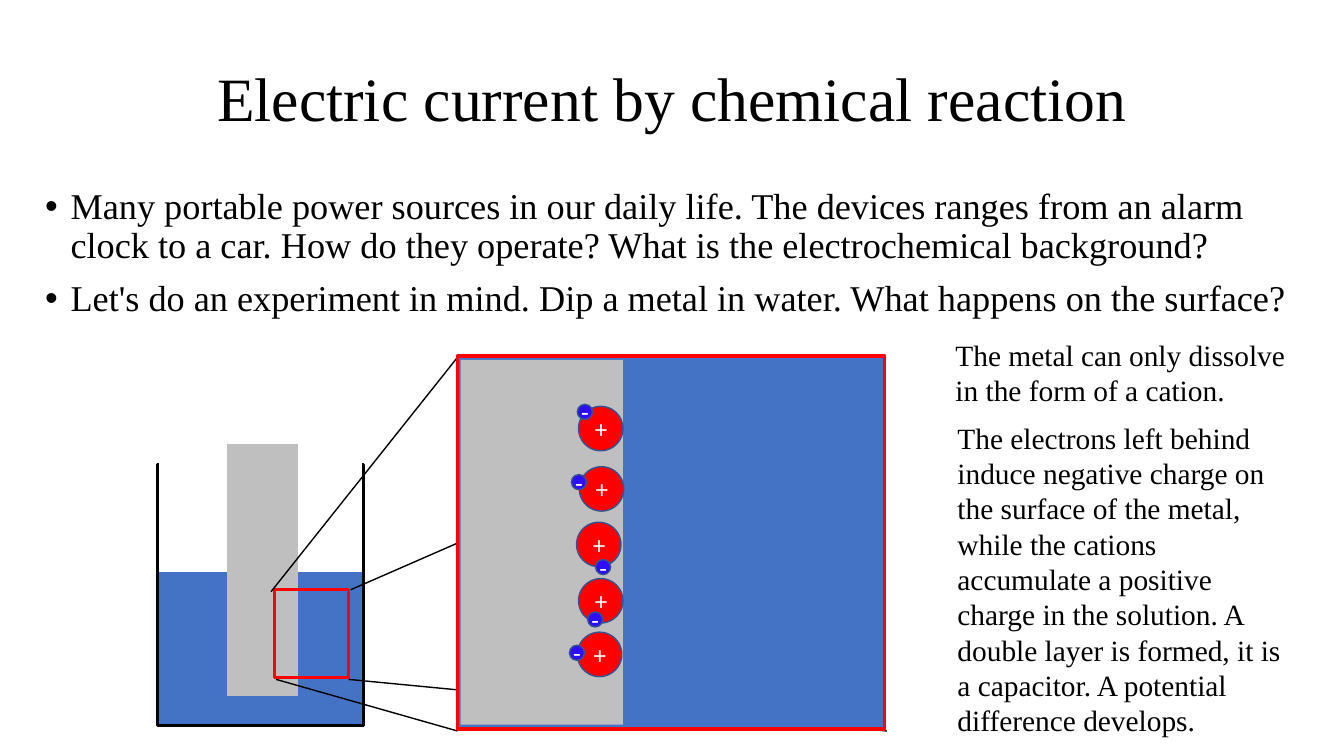
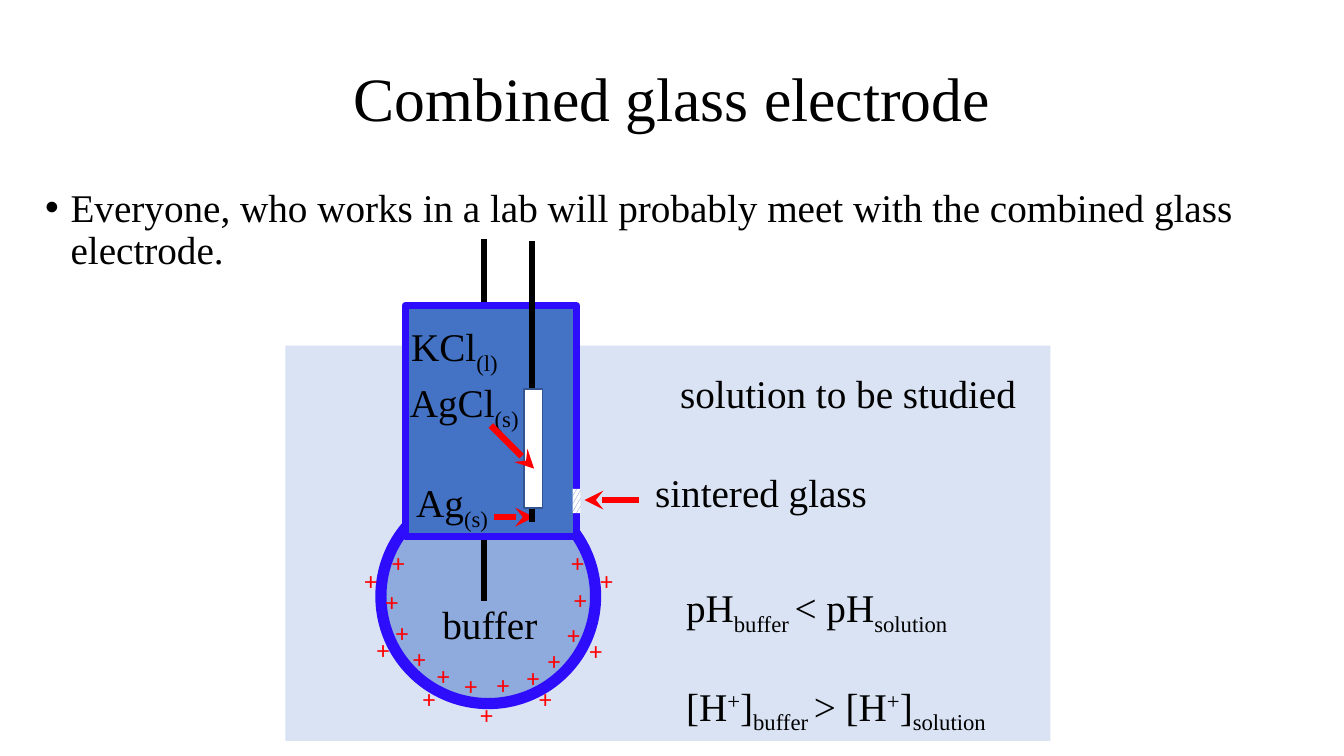
from lxml import etree
from pptx import Presentation
from pptx import util as u
from pptx.dml import color
from pptx.enum import dml, shapes, text
from pptx.oxml import ns

HUE = {"black": "000000", "white": "FFFFFF", "red": "FF0000", "blue": "4472C4",
       "ink": "2E0CFC", "edge": "325491", "metal": "BFBFBF",
       "bath": "DAE3F3", "bulb": "8FAADC"}
RGB = {name: color.RGBColor.from_string(code) for name, code in HUE.items()}
SERIF, SANS = "Times New Roman", "Calibri"
RECT, OVAL = shapes.MSO_SHAPE.RECTANGLE, shapes.MSO_SHAPE.OVAL
MID, TOP = text.MSO_ANCHOR.MIDDLE, text.MSO_ANCHOR.TOP


def draw(page, kind, box, fill=None, edge=None, width=1, rows=(),
         size=28, font=SERIF, ink="black", wrap=True):
    """Add a preset shape, or a text box when kind is None."""
    area = [u.Cm(n) for n in box]
    if kind is None:
        item = page.shapes.add_textbox(*area)
    else:
        item = page.shapes.add_shape(kind, *area)
        item.shadow.inherit = False
        for part, hue in ((item.fill, fill), (item.line.fill, edge)):
            if hue:
                part.solid()
                part.fore_color.rgb = RGB[hue]
            else:
                part.background()
        if edge:
            item.line.width = u.Pt(width)
    if not rows:
        return item
    frame = item.text_frame
    look = {"word_wrap": wrap, "vertical_anchor": MID if kind else TOP}
    if kind is None:
        look["auto_size"] = text.MSO_AUTO_SIZE.SHAPE_TO_FIT_TEXT
    for key, val in look.items():
        setattr(frame, key, val)
    for i, row in enumerate(rows):
        para = frame.add_paragraph() if i else frame.paragraphs[0]
        para.alignment = text.PP_ALIGN.CENTER if kind else text.PP_ALIGN.LEFT
        for words, base in [(row, 0)] if isinstance(row, str) else row:
            run = para.add_run()
            run.text = words
            for key, val in {"name": font, "size": u.Pt(size)}.items():
                setattr(run.font, key, val)
            run.font.color.rgb = RGB[ink]
            if base:
                run.font._element.set("baseline", str(base * 1000))
    return item


def line(page, ends, hue="black", width=1, arrow=False):
    """Add a straight line from one point to another."""
    wire = page.shapes.add_connector(shapes.MSO_CONNECTOR.STRAIGHT,
                                     *[u.Cm(n) for n in ends])
    wire.line.color.rgb = RGB[hue]
    wire.line.width = u.Pt(width)
    if arrow:
        etree.SubElement(wire.line._get_or_add_ln(), ns.qn("a:tailEnd"), type="stealth")
    etree.SubElement(wire._element.spPr, ns.qn("a:effectLst"))


deck = Presentation()
deck.slide_width, deck.slide_height = u.Cm(33.87), u.Cm(19.05)

# Titles and bullets
heads = [
    ("Electric current by chemical reaction", 25.9, 5, [
        "Many portable power sources in our daily life. The devices ranges from an "
        "alarm clock to a car. How do they operate? What is the electrochemical "
        "background?",
        "Let's do an experiment in mind. Dip a metal in water. What happens on the "
        "surface?"]),
    ("Combined glass electrode", 28, 2.54, [
        "Everyone, who works in a lab will probably meet with the combined glass "
        "electrode."]),
]
place = {"left": 2.34, "top": 0.71, "width": 29.21, "height": 3.68}
pages = []
for head, size, tall, points in heads:
    page = deck.slides.add_slide(deck.slide_layouts[5])
    pages.append(page)
    title = page.shapes.title
    for key, val in place.items():
        setattr(title, key, u.Cm(val))
    title.text_frame.text = head
    title.text_frame.vertical_anchor = MID
    para = title.text_frame.paragraphs[0]
    para.alignment, para.line_spacing = text.PP_ALIGN.CENTER, 0.9
    for key, val in {"name": SERIF, "size": u.Pt(44)}.items():
        setattr(para.runs[0].font, key, val)
    para.runs[0].font.color.rgb = RGB["black"]

    body = draw(page, None, (0.89, 4.62, 32.18, tall), rows=points, size=size)
    body.text_frame.auto_size = text.MSO_AUTO_SIZE.NONE
    for para in body.text_frame.paragraphs:
        para.line_spacing, para.space_before = 0.9, u.Pt(10)
        props = para._p.get_or_add_pPr()
        props.set("marL", str(u.Cm(0.64)))
        props.set("indent", str(u.Cm(-0.64)))
        etree.SubElement(props, ns.qn("a:buFont"), typeface="Arial")
        etree.SubElement(props, ns.qn("a:buChar"), char="•")
cell, probe = pages

# Beaker with the metal strip
for box, fill, edge, width in [
    ((3.96, 13.54, 5.21, 4.75), "blue", "black", 2.25),
    ((3.96, 11.71, 5.21, 2.64), "white", "black", 2.25),
    ((4.01, 11.51, 5.11, 2.9), "white", None, 1),
    ((5.74, 11.2, 1.75, 6.32), "metal", "metal", 1),
    ((6.91, 14.86, 1.88, 2.21), None, "red", 2.25),
]:
    draw(cell, RECT, box, fill, edge, width)

# Enlarged view of the surface
for ends in [(6.83, 14.91, 11.58, 8.94), (8.84, 14.86, 22.28, 8.99),
             (6.96, 17.12, 11.53, 18.42), (8.79, 17.12, 22.35, 18.42)]:
    line(cell, ends)
draw(cell, RECT, (11.53, 8.97, 10.77, 9.4), "blue", "red", 2.25)
draw(cell, RECT, (11.61, 9.07, 4.09, 9.19), "metal")

# Cations and electrons
ions = [(14.58, 10.24), (14.53, 13.16), (14.58, 14.58), (14.6, 11.76), (14.55, 15.93)]
specks = [(14.55, 10.19), (14.4, 11.96), (15.01, 14.1), (14.81, 15.42), (14.35, 16.26)]
for spots, side, fill, sign in [(ions, 1.12, "red", "+"), (specks, 0.38, "ink", "-")]:
    for x, y in spots:
        draw(cell, OVAL, (x, y, side, side), fill, "edge", rows=[sign],
             size=18, font=SANS, ink="white")

# Explanation
for box, words in [
    ((23.83, 8.36, 8.97, 2.06), "The metal can only dissolve in the form of a cation."),
    ((23.88, 10.46, 8.97, 8.33),
     "The electrons left behind induce negative charge on the surface of the metal, "
     "while the cations accumulate a positive charge in the solution. A double layer "
     "is formed, it is a capacitor. A potential difference develops."),
]:
    draw(cell, None, box, rows=[words], size=21)

# Electrode body in the solution
draw(probe, RECT, (7.19, 8.71, 19.28, 9.96), "bath")
draw(probe, OVAL, (9.6, 12.32, 5.41, 5.41), "bulb", "ink", 8)
line(probe, (12.19, 6.02, 12.19, 15.14), width=4.5)
draw(probe, RECT, (10.21, 7.7, 4.32, 5.82), "blue", "ink", 5)

# Silver wire, salt coat and sintered glass
line(probe, (12.45, 13.03, 13.46, 13.03), "red", 4.5, True)
line(probe, (13.41, 6.07, 13.41, 13.16), width=4)
draw(probe, RECT, (13.21, 9.8, 0.46, 3), "white", "edge")
frit = draw(probe, RECT, (14.43, 12.32, 0.2, 0.61))
frit.fill.patterned()
frit.fill.pattern = dml.MSO_PATTERN.LARGE_CONFETTI
frit.fill.fore_color.rgb, frit.fill.back_color.rgb = RGB["blue"], RGB["white"]

# Labels and their arrows
for x, y, wide, row in [
    (16.89, 9.17, 9.07, "solution to be studied"),
    (10.11, 8, 2.79, [("KCl", 0), ("(l)", -25)]),
    (10.08, 9.42, 3.38, [("AgCl", 0), ("(s)", -25)]),
    (10.24, 11.94, 2.44, [("Ag", 0), ("(s)", -25)]),
    (16.26, 11.68, 6.07, "sintered glass"),
    (10.9, 15.01, 2.95, "buffer"),
]:
    draw(probe, None, (x, y, wide, 1.45), rows=[row], wrap=False)
for ends in [(16.1, 12.6, 14.73, 12.6), (12.37, 10.72, 13.46, 11.81)]:
    line(probe, ends, "red", 4.5, True)

# Charges inside and outside the bulb
inner = [(9.63, 13.67), (9.47, 14.66), (14.15, 13.67), (14.05, 15.49),
         (14.22, 14.61), (9.73, 15.42), (10.16, 16.08), (10.77, 16.51),
         (13.56, 16.13), (13.03, 16.56), (12.27, 16.74), (11.46, 16.76)]
outer = [(14.61, 15.88), (14.88, 14.12), (13.34, 17.09), (10.41, 17.09),
         (9.25, 15.85), (8.94, 14.12), (11.86, 17.5)]
for x, y in inner + outer:
    draw(probe, None, (x, y, 0.84, 1.02), rows=["+"], size=18, font=SANS,
         ink="red", wrap=False)

# Comparison of acidity
acid = [("[H", 0), ("+", 30), ("]", 0)]
rules = draw(probe, None, (17.04, 14.58, 8.86, 3.45), wrap=False, rows=[
    [("pH", 0), ("buffer ", -25), ("< pH", 0), ("solution", -25)],
    acid + [("buffer ", -25), ("> ", 0)] + acid + [("solution", -25)],
])
rules.text_frame.paragraphs[1].space_before = u.Pt(32)

deck.save("out.pptx")
